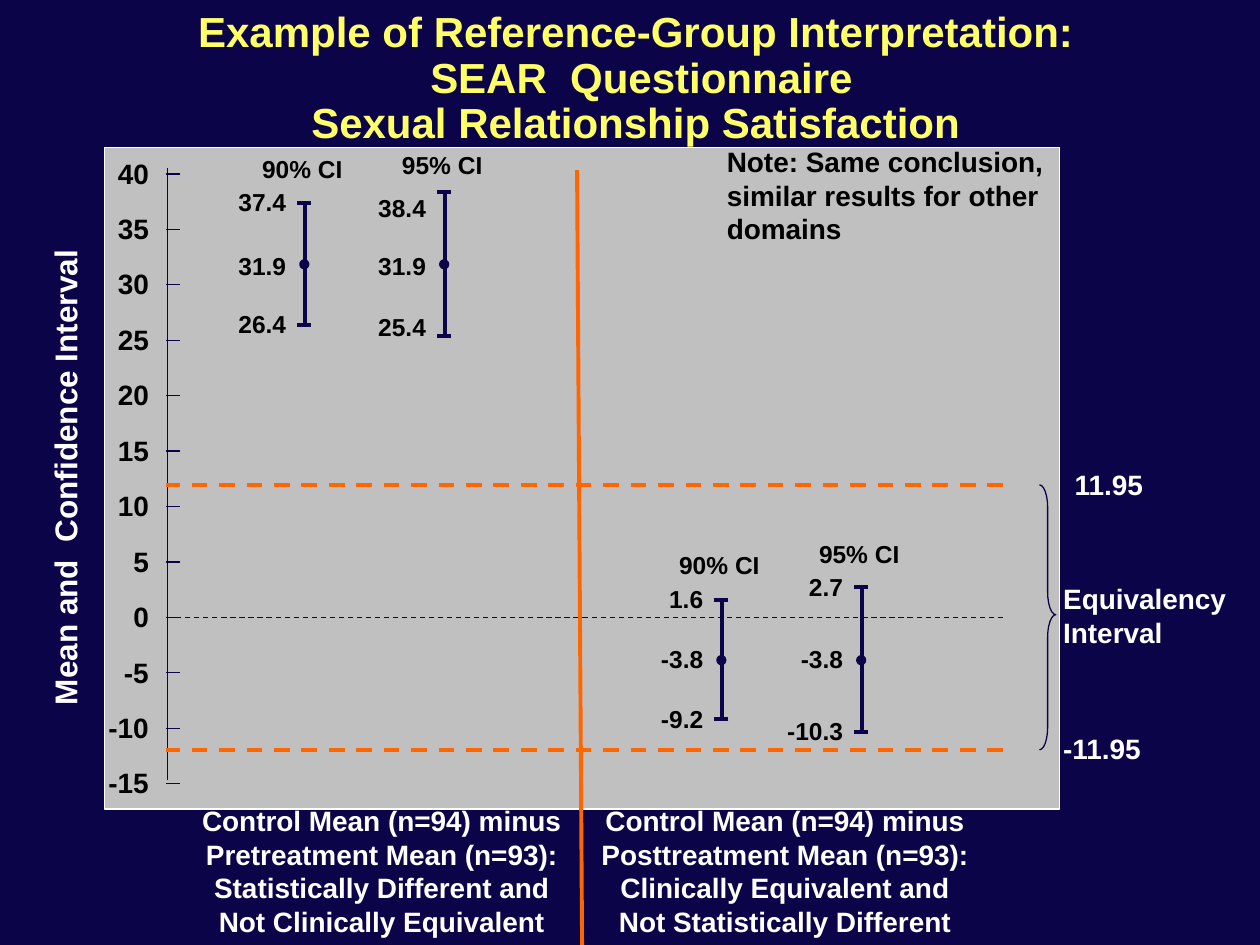
"""Build a slide of confidence intervals set against an equivalency interval."""
import pptx
import pptx.dml.color
import pptx.enum.dml
import pptx.enum.shapes
import pptx.enum.text
import pptx.oxml
import pptx.oxml.ns
import pptx.util

Inches = pptx.util.Inches
Shape = pptx.enum.shapes.MSO_SHAPE
Align = pptx.enum.text.PP_ALIGN
Anchor = pptx.enum.text.MSO_ANCHOR
AutoSize = pptx.enum.text.MSO_AUTO_SIZE

COLORS = {
    "navy": "0C0448",
    "panel": "C0C0C0",
    "title": "FFFF66",
    "orange": "FF6600",
    "white": "FFFFFF",
    "black": "000000",
}
AXIS_LEFT, AXIS_RIGHT, ZERO_TOP, STEP = 1.32, 7.96, 4.9, 0.44
LIMIT = 11.95


def height_of(value):
    return ZERO_TOP - STEP * value / 5


class SlideBuilder:
    def __init__(self, page, font="Arial"):
        self.page = page
        self.font = font

    def color(self, name):
        return pptx.dml.color.RGBColor.from_string(COLORS[name])

    def background(self, name):
        fill = self.page.background.fill
        fill.solid()
        fill.fore_color.rgb = self.color(name)

    def shape(self, kind, left, top, width, height, line, weight, fill=None):
        shape = self.page.shapes.add_shape(
            kind, Inches(left), Inches(top), Inches(width), Inches(height))
        shape.shadow.inherit = False
        if fill:
            shape.fill.solid()
            shape.fill.fore_color.rgb = self.color(fill)
        else:
            shape.fill.background()
        shape.line.color.rgb = self.color(line)
        shape.line.width = pptx.util.Pt(weight)
        return shape

    def line(self, x1, y1, x2, y2, color="navy", weight=2.25, dashed=False):
        line = self.page.shapes.add_connector(
            pptx.enum.shapes.MSO_CONNECTOR.STRAIGHT,
            Inches(x1), Inches(y1), Inches(x2), Inches(y2))
        line.line.color.rgb = self.color(color)
        line.line.width = pptx.util.Pt(weight)
        if dashed:
            line.line.dash_style = pptx.enum.dml.MSO_LINE.DASH
        effects = pptx.oxml.parse_xml(
            f"<a:effectLst {pptx.oxml.ns.nsdecls('a')}/>")
        line._element.spPr.append(effects)

    def text(self, text, left, top, width, height, size=16, color="white",
             align=Align.LEFT, wrap=False, anchor=Anchor.TOP, spacing=None):
        box = self.page.shapes.add_textbox(
            Inches(left), Inches(top), Inches(width), Inches(height))
        frame = box.text_frame
        frame.word_wrap = wrap
        frame.vertical_anchor = anchor
        if anchor == Anchor.TOP:
            frame.auto_size = AutoSize.SHAPE_TO_FIT_TEXT
        frame.text = text
        for para in frame.paragraphs:
            para.alignment = align
            para.line_spacing = spacing
            para.font.name = self.font
            para.font.size = pptx.util.Pt(size)
            para.font.bold = True
            para.font.color.rgb = self.color(color)
        return box

    def axis(self):
        self.line(1.33, 1.33, 1.33, 6.19, weight=0.75)
        for value in range(-15, 45, 5):
            y = height_of(value)
            self.line(1.43, y, AXIS_LEFT, y, weight=0.75)
            self.text(str(value), 0.72, y - 0.19, 0.56, 0.37,
                      color="black", align=Align.RIGHT)

    def level(self, value, color, weight):
        y = height_of(value)
        self.line(AXIS_RIGHT, y, AXIS_LEFT, y, color, weight, dashed=True)

    def interval(self, name, x, name_top, high, mean, low, nudges=(0, 0, 0)):
        self.line(x, height_of(high), x, height_of(low))
        for value in (low, high):
            y = height_of(value)
            self.line(x + 0.05, y, x - 0.06, y)
        self.shape(Shape.OVAL, x - 0.03, height_of(mean) - 0.02, 0.05, 0.05,
                   "navy", 2.25, "navy")
        self.text(name, x - 0.45, name_top, 0.86, 0.33, 14, "black", Align.CENTER)
        for value, nudge in zip((high, mean, low), nudges):
            self.text(str(value), x - 0.8, height_of(value) - 0.17 + nudge,
                      0.75, 0.33, 14, "black", Align.RIGHT)


def main():
    deck = pptx.Presentation()
    deck.slide_width, deck.slide_height = Inches(10), Inches(7.5)
    build = SlideBuilder(deck.slides.add_slide(deck.slide_layouts[6]))
    build.background("navy")
    build.shape(Shape.RECTANGLE, 0.83, 1.17, 7.58, 5.25, "white", 1, "panel")
    build.text("Example of Reference-Group Interpretation:\v SEAR  Questionnaire\v"
               "Sexual Relationship Satisfaction", 0.42, 0.17, 9.25, 0.92, 24,
               "title", Align.CENTER, True, Anchor.MIDDLE, 0.9)

    build.axis()
    build.level(LIMIT, "orange", 2.25)
    build.level(-LIMIT, "orange", 2.25)
    build.level(0, "navy", 0.75)
    brace = build.shape(Shape.RIGHT_BRACE, 8.25, height_of(LIMIT), 0.13,
                        height_of(-LIMIT) - height_of(LIMIT), "navy", 0.75)
    brace.adjustments[0], brace.adjustments[1] = 1.38, 0.49

    build.interval("90% CI", 2.42, 1.17, 37.4, 31.9, 26.4, (0, 0.02, 0))
    build.interval("95% CI", 3.53, 1.14, 38.4, 31.9, 25.4, (0.13, 0.02, -0.07))
    build.interval("90% CI", 5.73, 4.32, 1.6, -3.8, -9.2)
    build.interval("95% CI", 6.84, 4.23, 2.7, -3.8, -10.3)

    build.text("Control Mean (n=94) minus\nPretreatment Mean (n=93):\n"
               "Statistically Different and\vNot Clinically Equivalent",
               1.5, 6.33, 3.06, 1.17, align=Align.CENTER)
    build.text("Control Mean (n=94) minus\nPosttreatment Mean (n=93):\n"
               "Clinically Equivalent and\vNot Statistically Different",
               4.67, 6.33, 3.12, 1.17, align=Align.CENTER)
    caption = build.text("Mean and  Confidence Interval", -1.39, 3.59, 3.81, 0.4,
                         18, align=Align.CENTER)
    caption.rotation = 270
    build.text("Equivalency\nInterval", 8.34, 4.57, 1.5, 0.64)
    build.text(str(-LIMIT), 8.34, 5.76, 0.83, 0.37)
    build.text(str(LIMIT), 8.41, 3.66, 0.76, 0.37, align=Align.RIGHT)
    build.line(4.58, 1.35, 4.62, 7.5, "orange")
    build.text("Note: Same conclusion, similar results for other domains",
               5.67, 1.1, 2.83, 0.9, color="black", wrap=True)
    deck.save("out.pptx")


if __name__ == "__main__":
    main()
